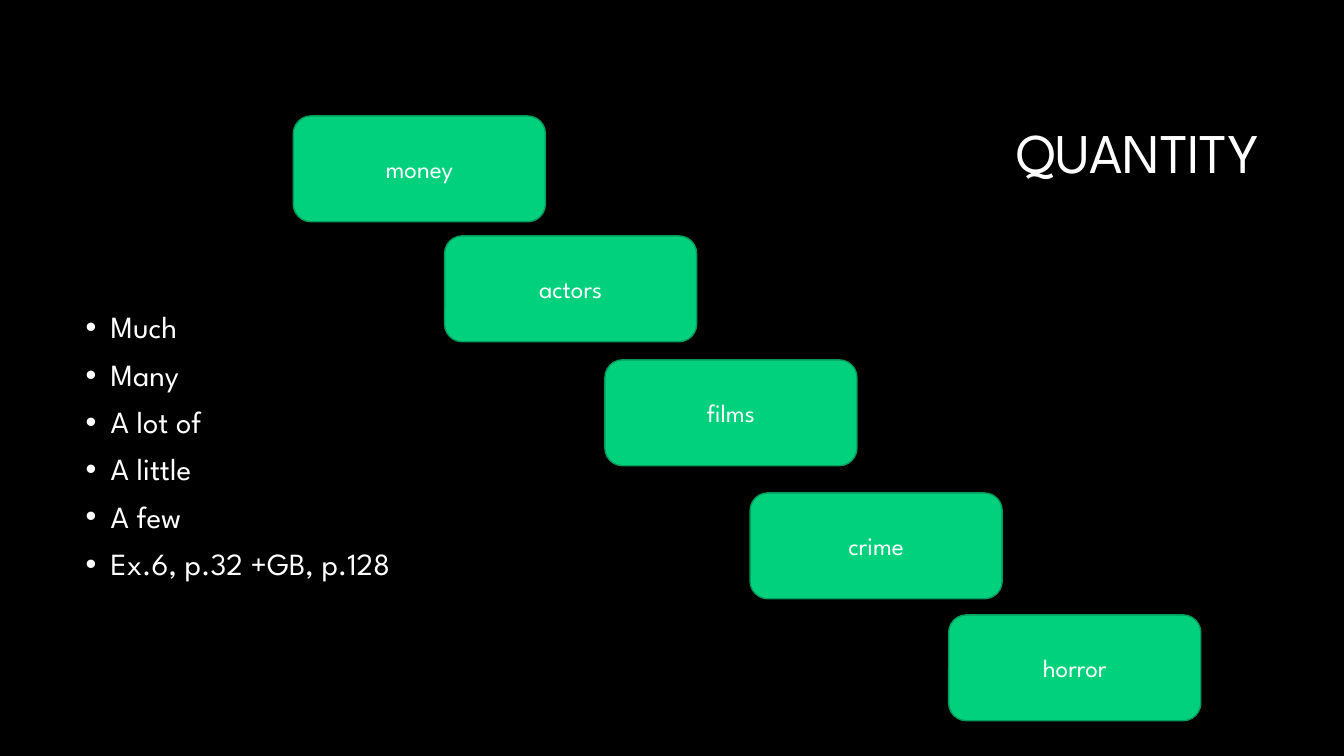
from dataclasses import dataclass

from lxml.etree import SubElement
from pptx import Presentation
from pptx.dml.color import RGBColor
from pptx.enum.shapes import MSO_SHAPE
from pptx.enum.text import MSO_ANCHOR, PP_ALIGN
from pptx.oxml.ns import qn
from pptx.shapes.autoshape import Shape
from pptx.slide import Slide
from pptx.util import Emu, Pt

PX = 9144  # 100 px to the inch
FONT = "League Spartan"
COLORS = {"back": "000000", "text": "FFFFFF", "card": "01D17D", "edge": "019B5C"}
CARD_W, CARD_H = 250, 105
INDENT = 25


@dataclass
class Card:
    word: str
    left: int
    top: int


CARDS = [
    Card("actors", 441, 234),
    Card("money", 291, 115),
    Card("horror", 941, 610),
    Card("films", 600, 357),
    Card("crime", 744, 489),
]
TERMS = ["Much", "Many", "A lot of", "A little", "A few", "Ex.6, p.32 +GB, p.128"]


def px(count: int) -> Emu:
    return Emu(count * PX)


def color(name: str) -> RGBColor:
    return RGBColor.from_string(COLORS[name])


def write(shape: Shape, lines: list[str], *, size: int,
          align: PP_ALIGN = PP_ALIGN.LEFT, anchor: MSO_ANCHOR = MSO_ANCHOR.MIDDLE,
          spacing: float = 1.0, before: int = 0, bullet: str = "") -> None:
    frame = shape.text_frame
    frame.word_wrap = True
    frame.vertical_anchor = anchor
    for i, line in enumerate(lines):
        para = frame.add_paragraph() if i else frame.paragraphs[0]
        para.text = line
        para.alignment = align
        para.line_spacing = spacing
        para.space_before = Pt(before if i else 0)
        if bullet:
            props = para._p.get_or_add_pPr()
            props.set("marL", str(px(INDENT)))
            props.set("indent", str(-px(INDENT)))
            SubElement(props, qn("a:buFont")).set("typeface", "Arial")
            SubElement(props, qn("a:buChar")).set("char", bullet)
        font = para.runs[0].font
        font.name, font.size = FONT, Pt(size)
        font.color.rgb = color("text")


def add_box(slide: Slide, left: int, top: int, width: int, height: int) -> Shape:
    return slide.shapes.add_textbox(px(left), px(top), px(width), px(height))


def add_card(slide: Slide, card: Card) -> None:
    shape = slide.shapes.add_shape(MSO_SHAPE.ROUNDED_RECTANGLE, px(card.left),
                                   px(card.top), px(CARD_W), px(CARD_H))
    shape.shadow.inherit = False
    shape.fill.solid()
    shape.fill.fore_color.rgb = color("card")
    shape.line.color.rgb = color("edge")
    shape.line.width = Pt(1)
    write(shape, [card.word], size=18, align=PP_ALIGN.CENTER)


def main() -> None:
    deck = Presentation()
    deck.slide_width, deck.slide_height = px(1333), px(750)
    slide = deck.slides.add_slide(deck.slide_layouts[6])
    slide.background.fill.solid()
    slide.background.fill.fore_color.rgb = color("back")

    # Title
    write(add_box(slide, 317, 84, 942, 141), ["QUANTITY"], size=40,
          align=PP_ALIGN.RIGHT, spacing=0.9)

    # Quantity words
    write(add_box(slide, 75, 305, 1183, 376), TERMS, size=22,
          anchor=MSO_ANCHOR.TOP, spacing=0.9, before=10, bullet="•")

    # Staircase of nouns
    for card in CARDS:
        add_card(slide, card)

    deck.save("out.pptx")


if __name__ == "__main__":
    main()
